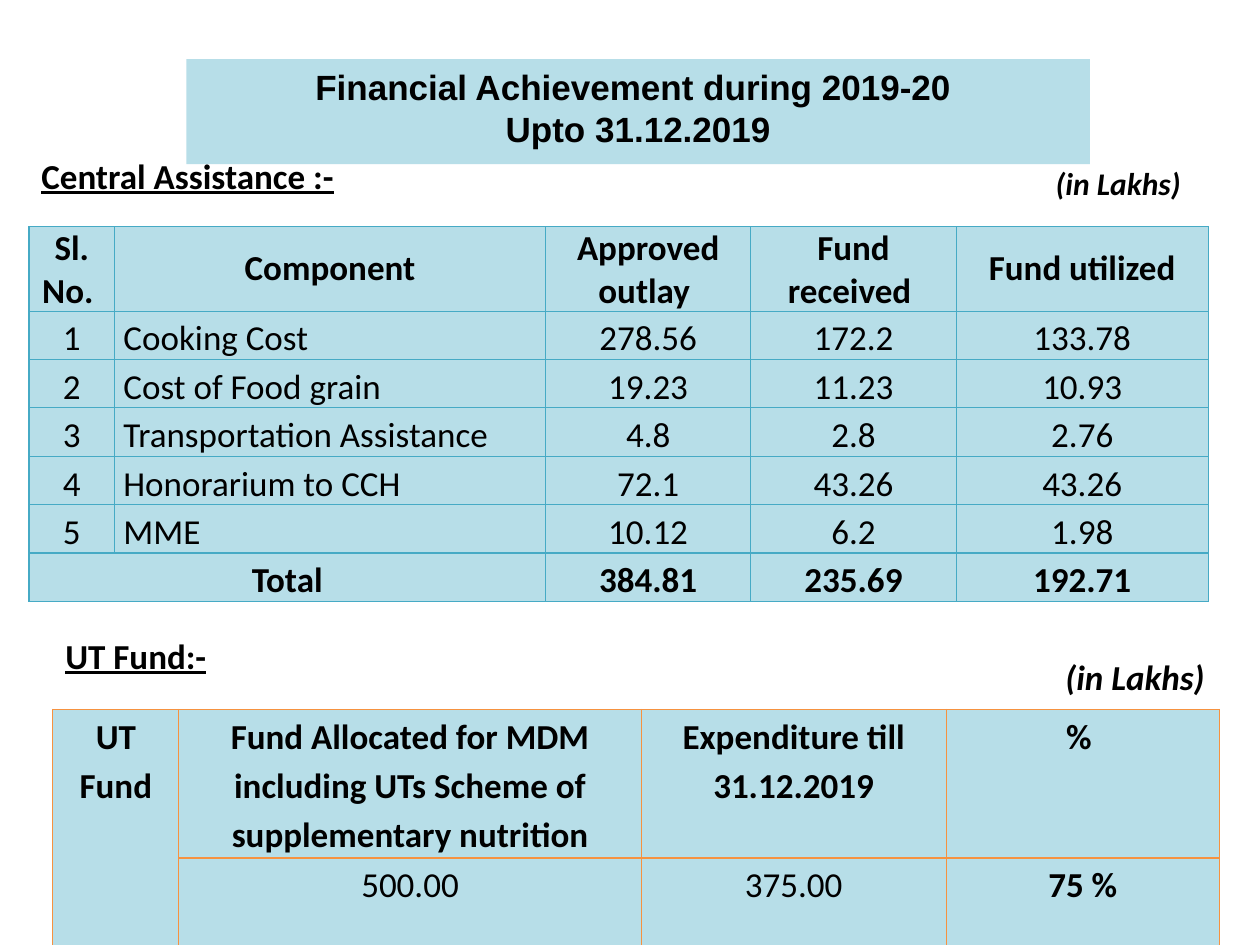
import pptx
import pptx.util
import pptx.dml.color
import pptx.enum.text
import pptx.oxml
import pptx.oxml.ns
from dataclasses import dataclass

Inches = pptx.util.Inches
ALIGN = pptx.enum.text.PP_ALIGN
ANCHOR = pptx.enum.text.MSO_ANCHOR
FIT = pptx.enum.text.MSO_AUTO_SIZE


@dataclass(frozen=True)
class Theme:
    ink: str = "000000"
    fill: str = "B7DEE8"
    teal: str = "46AAC5"
    orange: str = "F69240"
    size: int = 20
    small: int = 18
    head: str = "Arial"
    body: str = "Calibri"
    line: float = 0.75
    lead: float = 1.15


THEME = Theme()

HEADS = ["Sl. No. ", "Component", "Approved outlay ", "Fund received ", "Fund utilized"]
COSTS = [
    ["1", "Cooking Cost", "278.56", "172.2", "133.78"],
    ["2", "Cost of Food grain", "19.23", "11.23", "10.93"],
    ["3", "Transportation Assistance", "4.8", "2.8", "2.76"],
    ["4", "Honorarium to CCH", "72.1", "43.26", "43.26"],
    ["5", "MME", "10.12", "6.2", "1.98"],
]
TOTAL = ["Total", "", "384.81", "235.69", "192.71"]
FUND = [
    ["UT Fund", "Fund Allocated for MDM including UTs Scheme of supplementary nutrition",
     "Expenditure till 31.12.2019", "% "],
    ["", "500.00", "375.00", "75 %"],
]


def color(code):
    return pptx.dml.color.RGBColor.from_string(code)


def paint(item, code):
    item.fill.solid()
    item.fill.fore_color.rgb = color(code)


def write(para, text, align=ALIGN.LEFT, size=THEME.size, face=THEME.body,
          bold=True, italic=False, under=False):
    para.alignment = align
    run = para.add_run()
    run.text = text
    font = run.font
    font.name, font.size = face, pptx.util.Pt(size)
    font.bold, font.italic, font.underline = bold, italic, under
    font.color.rgb = color(THEME.ink)


def add_title(slide, lines):
    title = slide.shapes.title
    title.left, title.top = Inches(1.48), Inches(0.47)
    title.width, title.height = Inches(7.17), Inches(0.77)
    paint(title, THEME.fill)
    frame = title.text_frame
    frame.vertical_anchor = ANCHOR.TOP
    frame.auto_size = FIT.SHAPE_TO_FIT_TEXT
    for i, line in enumerate(lines):
        para = frame.add_paragraph() if i else frame.paragraphs[0]
        write(para, line, ALIGN.CENTER, face=THEME.head)


def add_label(slide, box, text, wrap=False, anchor=ANCHOR.MIDDLE, **style):
    shape = slide.shapes.add_textbox(*map(Inches, box))
    frame = shape.text_frame
    frame.word_wrap = wrap
    frame.auto_size = FIT.SHAPE_TO_FIT_TEXT
    frame.vertical_anchor = anchor
    write(frame.paragraphs[0], text, **style)


def add_unit(slide, box, size):
    add_label(slide, box, "(in Lakhs)", wrap=True, anchor=ANCHOR.TOP,
              align=ALIGN.RIGHT, size=size, italic=True)


def add_edges(cell, code):
    props = cell._tc.get_or_add_tcPr()
    space = pptx.oxml.ns.nsdecls("a")
    for side in "LRTB":
        props.append(pptx.oxml.parse_xml(
            f'<a:ln{side} {space} w="{pptx.util.Pt(THEME.line)}"><a:solidFill>'
            f'<a:srgbClr val="{code}"/></a:solidFill></a:ln{side}>'))


def add_grid(slide, left, top, cols, rows, edge):
    shape = slide.shapes.add_table(len(rows), len(cols), Inches(left), Inches(top),
                                   Inches(sum(cols)), Inches(sum(rows)))
    table = shape.table
    table.first_row = table.horz_banding = False
    for col, width in zip(table.columns, cols):
        col.width = Inches(width)
    for row, height in zip(table.rows, rows):
        row.height = Inches(height)
    for cell in table.iter_cells():
        add_edges(cell, edge)
        paint(cell, THEME.fill)
        cell.margin_left = cell.margin_right = Inches(0.07)
        cell.margin_top = cell.margin_bottom = 0
    return table


def fill_cell(cell, text, anchor, lead=THEME.lead, align=ALIGN.CENTER, bold=True):
    cell.vertical_anchor = anchor
    para = cell.text_frame.paragraphs[0]
    para.line_spacing = lead
    write(para, text, align, bold=bold)


def add_costs(slide):
    data = [HEADS, *COSTS, TOTAL]
    last = len(data) - 1
    table = add_grid(slide, 0.23, 1.8, [0.68, 3.42, 1.63, 1.63, 2],
                     [0.67] + [0.38] * last, THEME.teal)
    table.cell(last, 0).merge(table.cell(last, 1))
    for r, row in enumerate(data):
        for c, text in enumerate(row):
            if not text:
                continue
            name = c == 1 and r > 0
            mid = r == 0 or name or (r, c) == (4, 0)
            fill_cell(table.cell(r, c), text,
                      ANCHOR.MIDDLE if mid else ANCHOR.BOTTOM,
                      lead=THEME.lead if r else 1.0,
                      align=ALIGN.LEFT if name else ALIGN.CENTER,
                      bold=r in (0, last))


def add_fund(slide):
    table = add_grid(slide, 0.42, 5.63, [1, 3.67, 2.42, 2.17], [1.18, 0.38], THEME.orange)
    table.cell(0, 0).merge(table.cell(1, 0))
    for r, row in enumerate(FUND):
        for c, text in enumerate(row):
            if text:
                fill_cell(table.cell(r, c), text, ANCHOR.TOP, bold=r == 0 or c == 3)


def main():
    deck = pptx.Presentation()
    deck.slide_width, deck.slide_height = Inches(10), Inches(7.5)
    slide = deck.slides.add_slide(deck.slide_layouts[5])

    # Heading
    add_title(slide, ["Financial Achievement during 2019-20 ", "Upto 31.12.2019"])

    # Central assistance
    add_label(slide, (0.23, 1.17, 2.54, 0.44), "Central Assistance :-", under=True)
    add_costs(slide)

    # UT fund
    add_fund(slide)
    add_label(slide, (0.42, 4.98, 1.33, 0.44), "UT Fund:-", under=True)

    # Units
    add_unit(slide, (7.89, 1.25, 1.58, 0.4), THEME.small)
    add_unit(slide, (8.08, 5.15, 1.58, 0.44), THEME.size)

    deck.save("out.pptx")


if __name__ == "__main__":
    main()
